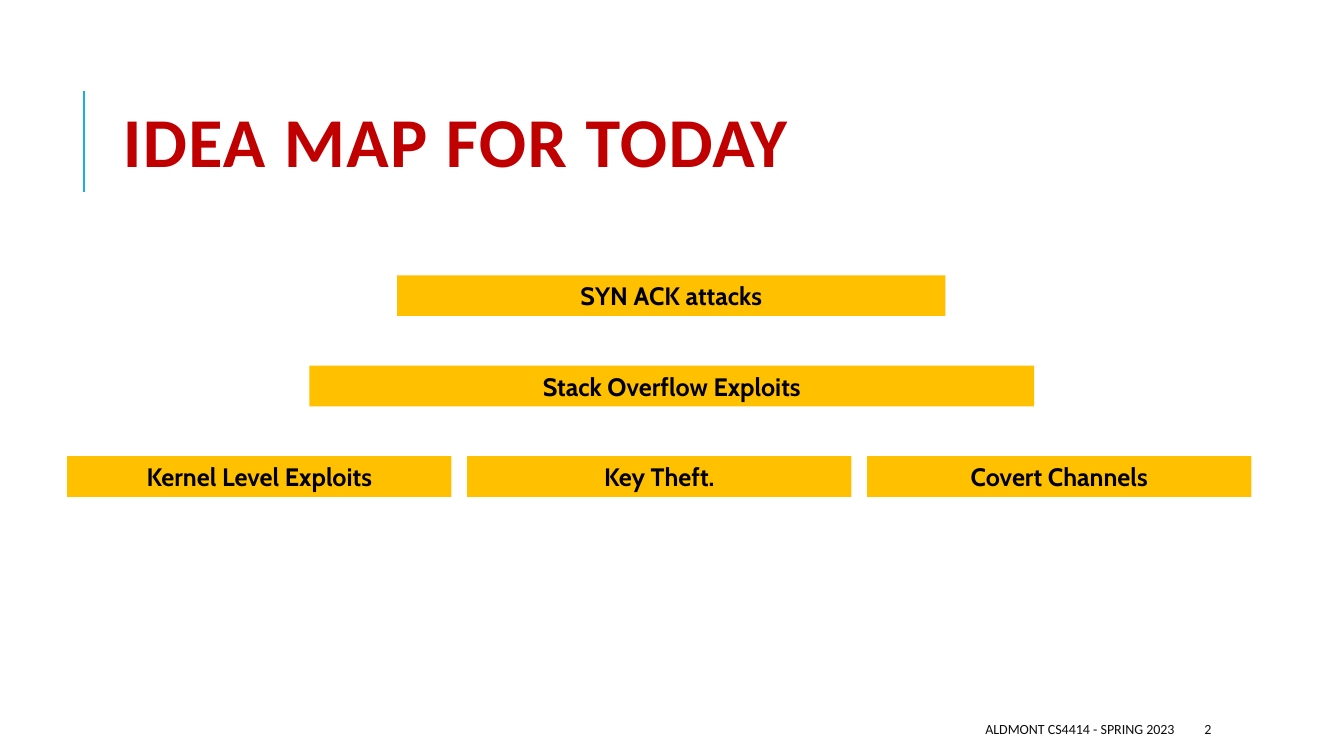
from pptx import Presentation
from pptx.dml.color import RGBColor
from pptx.enum import shapes, text
from pptx.oxml import parse_xml
from pptx.util import Pt


def colour(hex_code):
    return RGBColor.from_string(hex_code)


def write(frame, words, font_name, size, hex_code, align, bold=False):
    frame.word_wrap = True
    frame.vertical_anchor = text.MSO_ANCHOR.MIDDLE
    paragraph = frame.paragraphs[0]
    paragraph.text = words
    paragraph.alignment = align
    paragraph.font.name = font_name
    paragraph.font.size = Pt(size)
    paragraph.font.bold = bold
    paragraph.font.color.rgb = colour(hex_code)
    return paragraph


deck = Presentation()
deck.slide_width, deck.slide_height = Pt(960), Pt(540)
slide = deck.slides.add_slide(deck.slide_layouts[5])

# Accent line beside the title
accent = slide.shapes.add_connector(
    shapes.MSO_CONNECTOR.STRAIGHT, Pt(60), Pt(137), Pt(60), Pt(65))
accent.line.color.rgb = colour("1CADE4")
accent.line.width = Pt(1.5)
accent._element.spPr.append(parse_xml(
    '<a:effectLst xmlns:a="http://schemas.openxmlformats.org/drawingml/2006/main"/>'))

# Title, with slightly spaced letters
title = slide.shapes.title
title.left, title.top, title.width, title.height = Pt(80.6), Pt(46), Pt(849.6), Pt(118)
heading = write(title.text_frame, "IDEA MAP FOR TODAY", "Calibri", 50, "C00000",
                text.PP_ALIGN.LEFT, bold=True)
heading.line_spacing = 0.8
heading.runs[0].font._element.set("spc", "100")

# Footer: course and page number
for words, left, width, align in [
    ("ALDMONT CS4414 - SPRING 2023", 381.6, 464.4, text.PP_ALIGN.RIGHT),
    ("2", 853.2, 76.3, text.PP_ALIGN.LEFT),
]:
    footer = slide.shapes.add_textbox(Pt(left), Pt(509.8), Pt(width), Pt(21.6))
    write(footer.text_frame, words, "Calibri", 10, "0D0D0D", align)

# Idea map: each row has a left edge, a box width and its topics
idea_rows = [
    (283.7, 391.7, ["SYN ACK attacks"]),
    (221, 517.7, ["Stack Overflow Exploits"]),
    (48, 274.5, ["Kernel Level Exploits", "Key Theft.", "Covert Channels"]),
]
first_top, row_step, box_height, gap = 196.6, 64.6, 29.1, 11.2
for row, (left, width, topics) in enumerate(idea_rows):
    for column, topic in enumerate(topics):
        idea = slide.shapes.add_shape(
            shapes.MSO_SHAPE.RECTANGLE,
            Pt(left + column * (width + gap)), Pt(first_top + row * row_step),
            Pt(width), Pt(box_height))
        idea.shadow.inherit = False
        idea.fill.solid()
        idea.fill.fore_color.rgb = colour("FFC000")
        idea.line.fill.background()
        write(idea.text_frame, topic, "Cabin", 18, "000000",
              text.PP_ALIGN.CENTER, bold=True)

deck.save("out.pptx")
